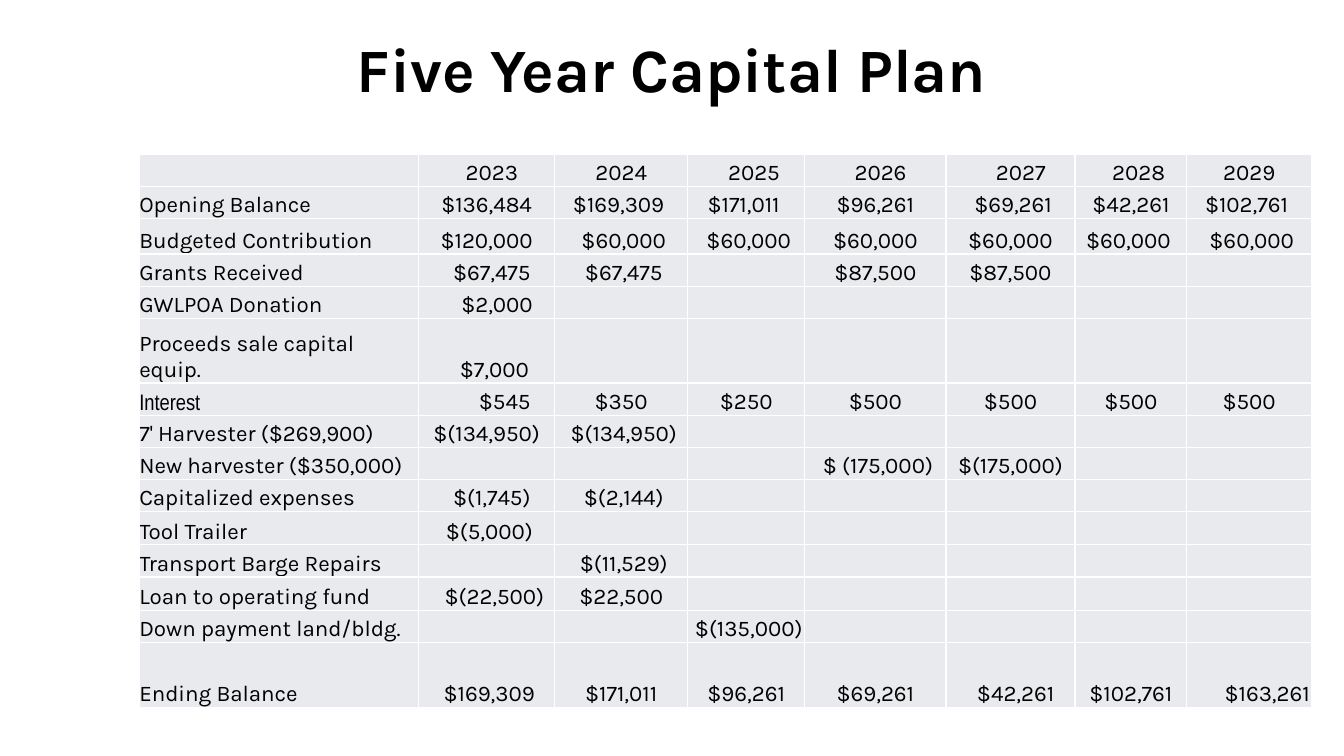
from dataclasses import dataclass

from lxml import etree
from pptx import Presentation
from pptx.dml.color import RGBColor
from pptx.enum.text import MSO_ANCHOR, PP_ALIGN
from pptx.oxml.ns import qn
from pptx.util import Cm, Pt

LEFT, CENTER = PP_ALIGN.LEFT, PP_ALIGN.CENTER
MIDDLE, BOTTOM = MSO_ANCHOR.MIDDLE, MSO_ANCHOR.BOTTOM


@dataclass(frozen=True)
class Theme:
    """Colours, fonts and sizes of the slide."""
    text: str = "000000"
    cell: str = "E8EAED"
    border: str = "FFFFFF"
    font: str = "Karla"
    narrow_font: str = "Arial Narrow"
    title_size: int = 44
    table_size: int = 16
    border_width: float = 1
    nudge: float = 0.13


THEME = Theme()
BLANK_LAYOUT = 6
TITLE_BOX = (2.33, 0.3, 29.2, 3.07)
TABLE_BOX = (3.51, 3.89, 29.54, 13.92)
COLUMN_WIDTHS = (7.04, 3.43, 3.35, 2.95, 3.56, 3.25, 2.82, 3.14)
PLAIN, LOW, MEDIUM, TALL = 0.81, 0.84, 0.89, 1.63

PLAN = [
    (PLAIN, "", ["2023", "2024", "2025", "2026", "2027", "2028", "2029"],
     [2, 0, 3, 2, 4, 3, 0]),
    (PLAIN, "Opening Balance",
     ["$136,484", "$169,309", "$171,011", "$96,261", "$69,261", "$42,261", "$102,761"],
     [0, -1, -1, 0, 1, 0, -1]),
    (MEDIUM, "Budgeted Contribution",
     ["$120,000", "$60,000", "$60,000", "$60,000", "$60,000", "$60,000", "$60,000"],
     [0, 1, 1, 0, 0, -1, 1]),
    (PLAIN, "Grants Received",
     ["$67,475", "$67,475", "", "$87,500", "$87,500"], [2, 1, 0, 0, 0]),
    (PLAIN, "GWLPOA Donation", ["$2,000"], [4]),
    (TALL, "Proceeds sale capital equip.", ["$7,000"], [3]),
    (PLAIN, "Interest",
     ["$545", "$350", "$250", "$500", "$500", "$500", "$500"], [7]),
    (PLAIN, "7' Harvester ($269,900)", ["$(134,950)", "$(134,950)"], [0, 1]),
    (PLAIN, "New harvester ($350,000)",
     ["", "", "", "$ (175,000)", "$(175,000)"], [0, 0, 0, 1, 0]),
    (PLAIN, "Capitalized expenses", ["$(1,745)", "$(2,144)"], [2, 1]),
    (LOW, "Tool Trailer", ["$(5,000)"], [1]),
    (PLAIN, "Transport Barge Repairs", ["", "$(11,529)"], [0, 1]),
    (LOW, "Loan to operating fund", ["$(22,500)", "$22,500"], [3, 0]),
    (PLAIN, "Down payment land/bldg.", ["", "", "$(135,000)"], [0, 0, 1]),
    (TALL, "Ending Balance",
     ["$169,309", "$171,011", "$96,261", "$69,261", "$42,261", "$102,761", "$163,261"],
     [1, 0, 0, 0, 2, 0, 7]),
]


def apply_format(target, values):
    """Set each named attribute on the target."""
    for name, value in values.items():
        setattr(target, name, value)


def write_text(text_frame, text, size, alignment, font=THEME.font, bold=False):
    """Write one formatted run and return its paragraph."""
    paragraph = text_frame.paragraphs[0]
    paragraph.alignment = alignment
    run = paragraph.add_run()
    run.text = text
    apply_format(run.font, {"name": font, "size": Pt(size), "bold": bold})
    run.font.color.rgb = RGBColor.from_string(THEME.text)
    return paragraph


def add_borders(cell):
    """Draw the four border lines of a cell."""
    properties = cell._tc.get_or_add_tcPr()
    for index, side in enumerate(("a:lnL", "a:lnR", "a:lnT", "a:lnB")):
        line = etree.Element(qn(side), w=str(Pt(THEME.border_width)))
        fill = etree.SubElement(line, qn("a:solidFill"))
        etree.SubElement(fill, qn("a:srgbClr"), val=THEME.border)
        properties.insert(index, line)


def format_cell(cell, nudge):
    """Style a cell and shift its text by a number of nudge steps."""
    apply_format(cell, {
        "margin_left": Cm(max(nudge, 0) * THEME.nudge),
        "margin_right": Cm(max(-nudge, 0) * THEME.nudge),
        "margin_top": 0,
        "margin_bottom": 0,
        "vertical_anchor": BOTTOM,
    })
    cell.fill.solid()
    cell.fill.fore_color.rgb = RGBColor.from_string(THEME.cell)
    add_borders(cell)


def add_title(slide, box, text):
    """Place the centred title in the box."""
    text_frame = slide.shapes.add_textbox(*map(Cm, box)).text_frame
    apply_format(text_frame, {"word_wrap": True, "vertical_anchor": MIDDLE})
    paragraph = write_text(text_frame, text, THEME.title_size, CENTER, bold=True)
    paragraph.line_spacing = 0.9


def add_plan_table(slide, box, plan):
    """Place the capital plan table in the box."""
    table = slide.shapes.add_table(
        len(plan), len(COLUMN_WIDTHS), *map(Cm, box)).table
    apply_format(table, {"first_row": False, "horz_banding": False})
    for column, width in zip(table.columns, COLUMN_WIDTHS):
        column.width = Cm(width)
    for row, (height, label, values, nudges) in zip(table.rows, plan):
        row.height = Cm(height)
        texts = dict(enumerate([label, *values]))
        shifts = dict(enumerate([0, *nudges]))
        for index, cell in enumerate(row.cells):
            format_cell(cell, shifts.get(index, 0))
            text = texts.get(index, "")
            if text:
                font = THEME.narrow_font if text == "Interest" else THEME.font
                alignment = CENTER if index else LEFT
                write_text(cell.text_frame, text, THEME.table_size, alignment, font)


def main():
    """Build the slide and save it."""
    presentation = Presentation()
    apply_format(presentation, {"slide_width": Cm(33.87), "slide_height": Cm(19.05)})
    slide = presentation.slides.add_slide(presentation.slide_layouts[BLANK_LAYOUT])
    add_title(slide, TITLE_BOX, "Five Year Capital Plan")
    add_plan_table(slide, TABLE_BOX, PLAN)
    presentation.save("out.pptx")


if __name__ == "__main__":
    main()
